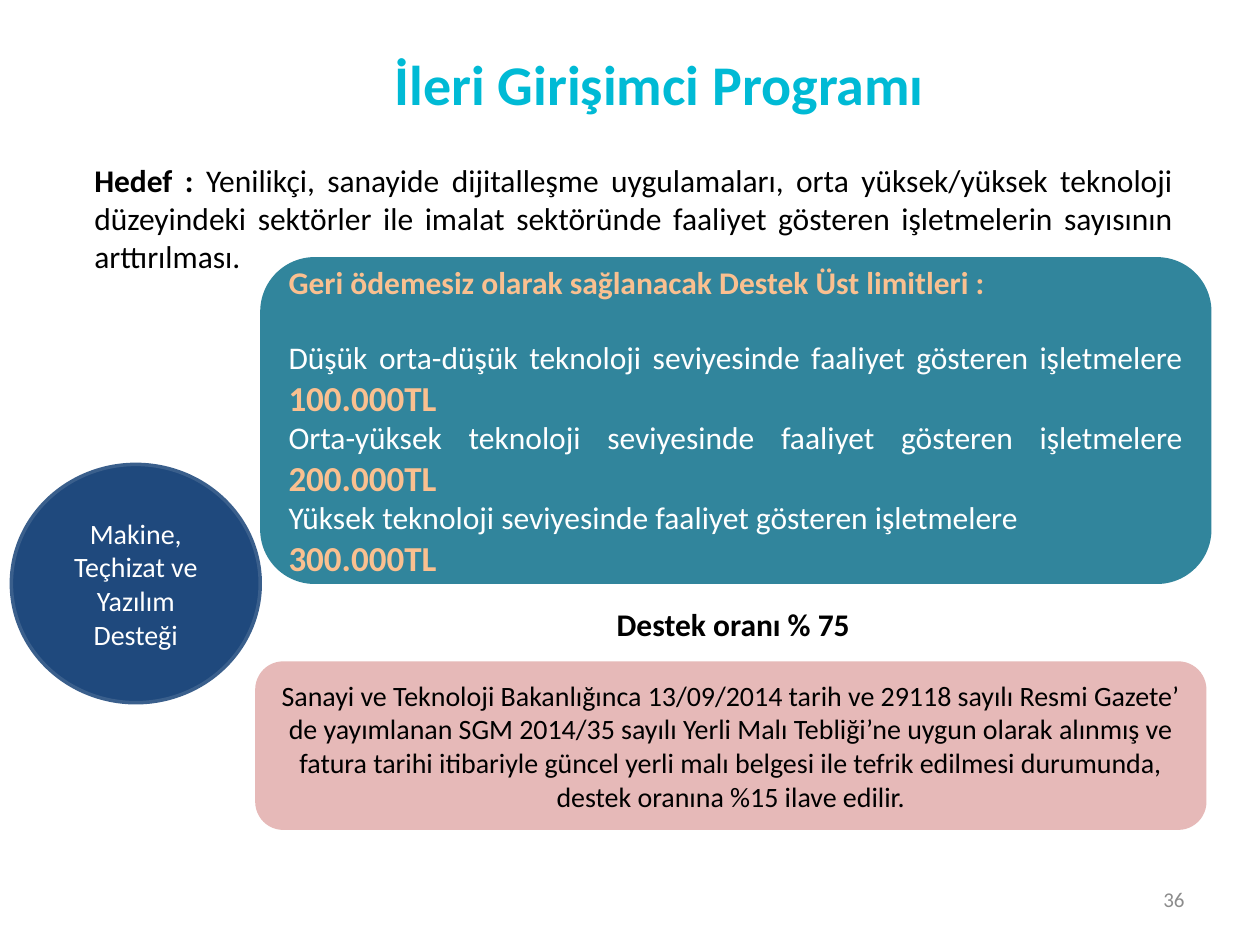
"""Build the slide on the limits and rate of the advanced entrepreneur support."""
from pptx import Presentation
from pptx import util as u
from pptx.dml.color import RGBColor
from pptx.enum import shapes, text

WIDE, HIGH = u.Pt(720), u.Pt(538)
FONT = "Calibri"
HUES = {
    "title": "00BAD5", "ink": "000000", "paper": "FFFFFF", "grey": "8C8C8C",
    "teal": "31859C", "peach": "FAC090", "navy": "1F497D", "edge": "3A5F8C",
    "rose": "E6B9B8",
}
ALIGN = text.PP_ALIGN
ROUND = shapes.MSO_SHAPE.ROUNDED_RECTANGLE
LIMITS = [
    ("Düşük orta-düşük teknoloji seviyesinde faaliyet gösteren işletmelere ", "100.000TL"),
    ("Orta-yüksek teknoloji seviyesinde faaliyet gösteren işletmelere ", "200.000TL"),
]


def tint(name):
    """Return the named colour."""
    return RGBColor.from_string(HUES[name])


def area(left, top, width, height):
    """Turn percentages of the slide into lengths."""
    return [int(share * side / 100) for share, side in
            zip((left, top, width, height), (WIDE, HIGH, WIDE, HIGH))]


def run(words, size=18, hue="ink", bold=False):
    """Describe a run of text."""
    return words, size, hue, bold


def write(shape, *paras, align=ALIGN.CENTER, anchor=text.MSO_ANCHOR.MIDDLE, gap=0):
    """Fill a shape with paragraphs of runs, with a gap after the first."""
    frame = shape.text_frame
    frame.word_wrap = True
    frame.vertical_anchor = anchor
    for i, runs in enumerate(paras):
        para = frame.add_paragraph() if i else frame.paragraphs[0]
        para.alignment = align
        if gap and not i:
            para.space_after = u.Pt(gap)
        for words, size, hue, bold in runs:
            part = para.add_run()
            part.text = words
            font = part.font
            font.name, font.size, font.bold = FONT, u.Pt(size), bold
            font.color.rgb = tint(hue)


def label(slide, place):
    """Add an empty text box."""
    return slide.shapes.add_textbox(*area(*place))


def panel(slide, kind, place, fill=None, edge=None):
    """Add a flat preset shape."""
    shape = slide.shapes.add_shape(kind, *area(*place))
    shape.shadow.inherit = False
    if fill:
        shape.fill.solid()
        shape.fill.fore_color.rgb = tint(fill)
    else:
        shape.fill.background()
    if edge:
        shape.line.color.rgb = tint(edge)
        shape.line.width = u.Pt(2)
    else:
        shape.line.fill.background()
    return shape


def main():
    """Compose and save the slide."""
    deck = Presentation()
    deck.slide_width, deck.slide_height = WIDE, HIGH
    slide = deck.slides.add_slide(deck.slide_layouts[5])

    title = slide.shapes.title
    title.left, title.top, title.width, title.height = area(14.6, 2.5, 75.5, 12.6)
    write(title, [run("İleri Girişimci Programı", 32, "title", True)])

    write(label(slide, (71.7, 92.75, 23.3, 5.35)), [run("36", 12, "grey")],
          align=ALIGN.RIGHT)
    write(label(slide, (6.5, 16.45, 87.6, 13.5)), [
        run("Hedef : ", bold=True),
        run("Yenilikçi, sanayide dijitalleşme uygulamaları, orta yüksek/yüksek "
            "teknoloji düzeyindeki sektörler ile imalat sektöründe faaliyet "
            "gösteren işletmelerin sayısının arttırılması."),
    ], align=ALIGN.JUSTIFY, anchor=text.MSO_ANCHOR.TOP)

    write(panel(slide, ROUND, (20.65, 27.3, 75.5, 34.7), "teal"),
          [run("Geri ödemesiz olarak sağlanacak Destek Üst limitleri :",
               hue="peach", bold=True)],
          *[[run(who, hue="paper"), run(cap, 20, "peach", True)]
            for who, cap in LIMITS],
          [run("Yüksek teknoloji seviyesinde faaliyet gösteren işletmelere ",
               hue="paper")],
          [run("300.000TL", 20, "peach", True)],
          align=ALIGN.JUSTIFY, gap=21.5)

    write(panel(slide, shapes.MSO_SHAPE.OVAL, (0.9, 49.3, 19.75, 25.3), "navy", "edge"),
          [run("Makine, Teçhizat ve Yazılım Desteği", 16, "paper")])

    write(panel(slide, ROUND, (20.25, 70.2, 75.5, 17.9), "rose"), [
        run("Sanayi ve Teknoloji Bakanlığınca 13/09/2014 tarih ve 29118 sayılı "
            "Resmi Gazete’ de yayımlanan SGM 2014/35 sayılı Yerli Malı Tebliği’ne "
            "uygun olarak alınmış ve fatura tarihi itibariyle güncel yerli malı "
            "belgesi ile tefrik edilmesi durumunda, destek oranına %15 ilave "
            "edilir.", 16)])

    write(panel(slide, ROUND, (20.65, 62.3, 75.1, 7.9)),
          [run("Destek oranı % 75", bold=True)])
    deck.save("out.pptx")


if __name__ == "__main__":
    main()
